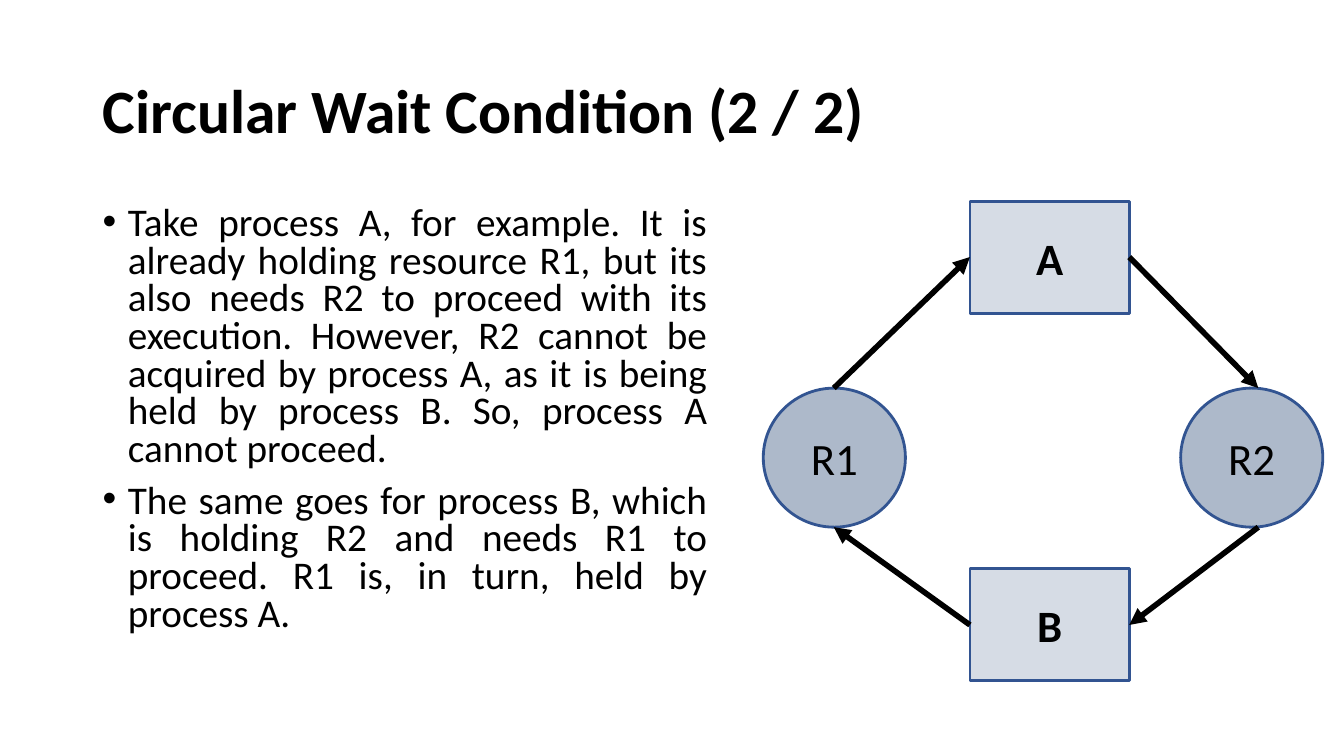
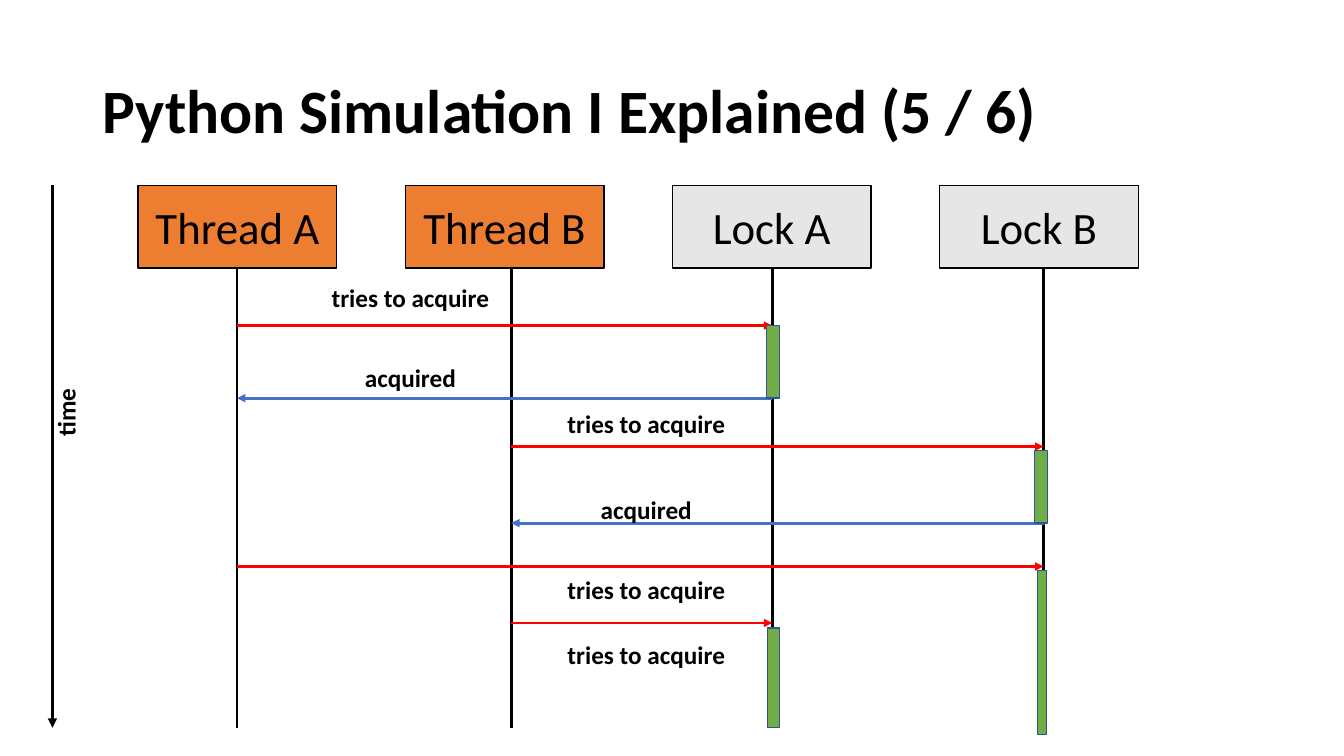
from dataclasses import dataclass

from pptx import Presentation
from pptx.dml.color import RGBColor
from pptx.enum.shapes import MSO_CONNECTOR, MSO_SHAPE
from pptx.enum.text import MSO_ANCHOR, PP_ALIGN
from pptx.oxml.ns import qn
from pptx.util import Inches, Pt
from lxml import etree

RECT, PROCESS, OVAL = MSO_SHAPE.RECTANGLE, MSO_SHAPE.FLOWCHART_PROCESS, MSO_SHAPE.OVAL
STRAIGHT = MSO_CONNECTOR.STRAIGHT
LEFT, CENTER, JUSTIFY = PP_ALIGN.LEFT, PP_ALIGN.CENTER, PP_ALIGN.JUSTIFY
TOP, MIDDLE = MSO_ANCHOR.TOP, MSO_ANCHOR.MIDDLE


@dataclass(frozen=True)
class Theme:
    font: str = "Calibri"
    title: int = 44
    body: int = 28
    node: int = 32
    label: int = 18
    ink: str = "000000"
    outline: str = "325491"
    process: str = "D6DCE5"
    resource: str = "ADB9CA"
    thread: str = "ED7D31"
    lock: str = "E7E6E6"
    active: str = "70AD47"
    request: str = "FF0000"
    reply: str = "4472C4"


T = Theme()


def rgb(value):
    return RGBColor.from_string(value)


def write(tf, *texts, size, bold=False, align=LEFT, anchor=TOP, wrap=True,
          spacing=None, before=None, bullet=False):
    """Fill a text frame with one paragraph per text."""
    tf.word_wrap = wrap
    tf.vertical_anchor = anchor
    for i, text in enumerate(texts):
        p = tf.paragraphs[0] if i == 0 else tf.add_paragraph()
        p.alignment = align
        if spacing is not None:
            p.line_spacing = spacing
        if before is not None:
            p.space_before = Pt(before)
        if bullet:
            pPr = p._p.get_or_add_pPr()
            pPr.set("marL", str(Inches(0.25)))
            pPr.set("indent", str(-Inches(0.25)))
            etree.SubElement(pPr, qn("a:buFont")).set("typeface", "Arial")
            etree.SubElement(pPr, qn("a:buChar")).set("char", "•")
        r = p.add_run()
        r.text = text
        r.font.name, r.font.size, r.font.bold = T.font, Pt(size), bold
        r.font.color.rgb = rgb(T.ink)


def add_text(s, x, y, w, h, *texts, rotation=0, **fmt):
    sp = s.shapes.add_textbox(Inches(x), Inches(y), Inches(w), Inches(h))
    sp.rotation = rotation
    write(sp.text_frame, *texts, **fmt)


def add_label(s, x, y, w, text, rotation=0):
    add_text(s, x, y, w, 0.4, text, size=T.label, bold=True, wrap=False,
             rotation=rotation)


def add_box(s, kind, x, y, w, h, fill, line=T.outline, weight=1, text="", bold=False):
    sp = s.shapes.add_shape(kind, Inches(x), Inches(y), Inches(w), Inches(h))
    sp.shadow.inherit = False
    sp.fill.solid()
    sp.fill.fore_color.rgb = rgb(fill)
    sp.line.color.rgb = rgb(line)
    sp.line.width = Pt(weight)
    if text:
        write(sp.text_frame, text, size=T.node, bold=bold, align=CENTER, anchor=MIDDLE)


def add_line(s, start, end, color=T.ink, weight=2, arrow=True):
    c = s.shapes.add_connector(STRAIGHT, *map(Inches, (*start, *end)))
    c.line.color.rgb = rgb(color)
    c.line.width = Pt(weight)
    if arrow:
        etree.SubElement(c.line._get_or_add_ln(), qn("a:tailEnd")).set("type", "triangle")
    etree.SubElement(c._element.spPr, qn("a:effectLst"))


def add_slide(prs, title):
    s = prs.slides.add_slide(prs.slide_layouts[6])
    add_text(s, 0.92, 0.4, 11.5, 1.45, title, size=T.title, bold=True,
             anchor=MIDDLE, spacing=0.9)
    return s


def circular_wait(prs):
    s = add_slide(prs, "Circular Wait Condition (2 / 2)")
    add_text(
        s, 0.92, 2, 6.19, 4.76,
        "Take process A, for example. It is already holding resource R1, but its also "
        "needs R2 to proceed with its execution. However, R2 cannot be acquired by "
        "process A, as it is being held by process B. So, process A cannot proceed.",
        "The same goes for process B, which is holding R2 and needs R1 to proceed. "
        "R1 is, in turn, held by process A.",
        size=T.body, align=JUSTIFY, spacing=0.8, before=10, bullet=True)

    # Processes and resources
    for name, y in (("A", 2), ("B", 5.64)):
        add_box(s, PROCESS, 9.62, y, 1.58, 1.11, T.process, weight=2, text=name, bold=True)
    for name, x in (("R1", 7.57), ("R2", 11.71)):
        add_box(s, OVAL, x, 3.85, 1.41, 1.38, T.resource, weight=2, text=name)

    # Cycle: each pair of points is one arrow
    r1_top, r1_bottom = (8.27, 3.85), (8.27, 5.23)
    r2_top, r2_bottom = (12.48, 3.85), (12.48, 5.23)
    a_left, a_right = (9.62, 2.55), (11.2, 2.55)
    b_left, b_right = (9.62, 6.2), (11.2, 6.2)
    for start, end in ((r1_top, a_left), (a_right, r2_top),
                       (r2_bottom, b_right), (b_left, r1_bottom)):
        add_line(s, start, end, weight=4)


def lock_sequence(prs):
    s = add_slide(prs, "Python Simulation I Explained (5 / 6)")
    top, head_h, bottom = 1.84, 0.82, 7.22

    # Time axis
    add_line(s, (0.52, top), (0.52, bottom), weight=2.25)
    add_label(s, 0.31, 3.89, 0.68, "time", rotation=270)

    # Participants and their lifelines
    lifelines = {"Thread A": 2.35, "Thread B": 5.07, "Lock A": 7.66, "Lock B": 10.35}
    for i, (name, x) in enumerate(lifelines.items()):
        fill = T.thread if name.startswith("Thread") else T.lock
        add_box(s, RECT, 1.37 + 2.65 * i, top, 1.97, head_h, fill, line=T.ink, text=name)
        add_line(s, (x, top + head_h), (x, bottom), arrow=False)

    # Messages: sender, receiver, height, label position
    messages = (
        ("Thread A", "Lock A", 3.23, (3.19, 2.75)),
        ("Lock A", "Thread A", 3.95, (3.52, 3.55)),
        ("Thread B", "Lock B", 4.43, (5.53, 4)),
        ("Lock B", "Thread B", 5.19, (5.86, 4.86)),
        ("Thread A", "Lock B", 5.62, (5.53, 5.65)),
        ("Thread B", "Lock A", 6.18, (5.53, 6.29)),
    )
    for sender, receiver, y, label_at in messages:
        if sender.startswith("Lock"):
            color, text, width = T.reply, "acquired", 1.11
        else:
            color, text, width = T.request, "tries to acquire", 1.78
        add_line(s, (lifelines[sender], y), (lifelines[receiver], y), color)
        add_label(s, *label_at, width, text)

    # Lock activity bars
    for x, y, w, h in ((7.6, 3.23, 0.13, 0.72), (10.26, 4.47, 0.13, 0.72),
                       (10.29, 5.66, 0.09, 1.63), (7.61, 6.23, 0.12, 0.99)):
        add_box(s, RECT, x, y, w, h, T.active)


def main():
    prs = Presentation()
    prs.slide_width, prs.slide_height = Inches(13.33), Inches(7.5)
    circular_wait(prs)
    lock_sequence(prs)
    prs.save("out.pptx")


if __name__ == "__main__":
    main()
